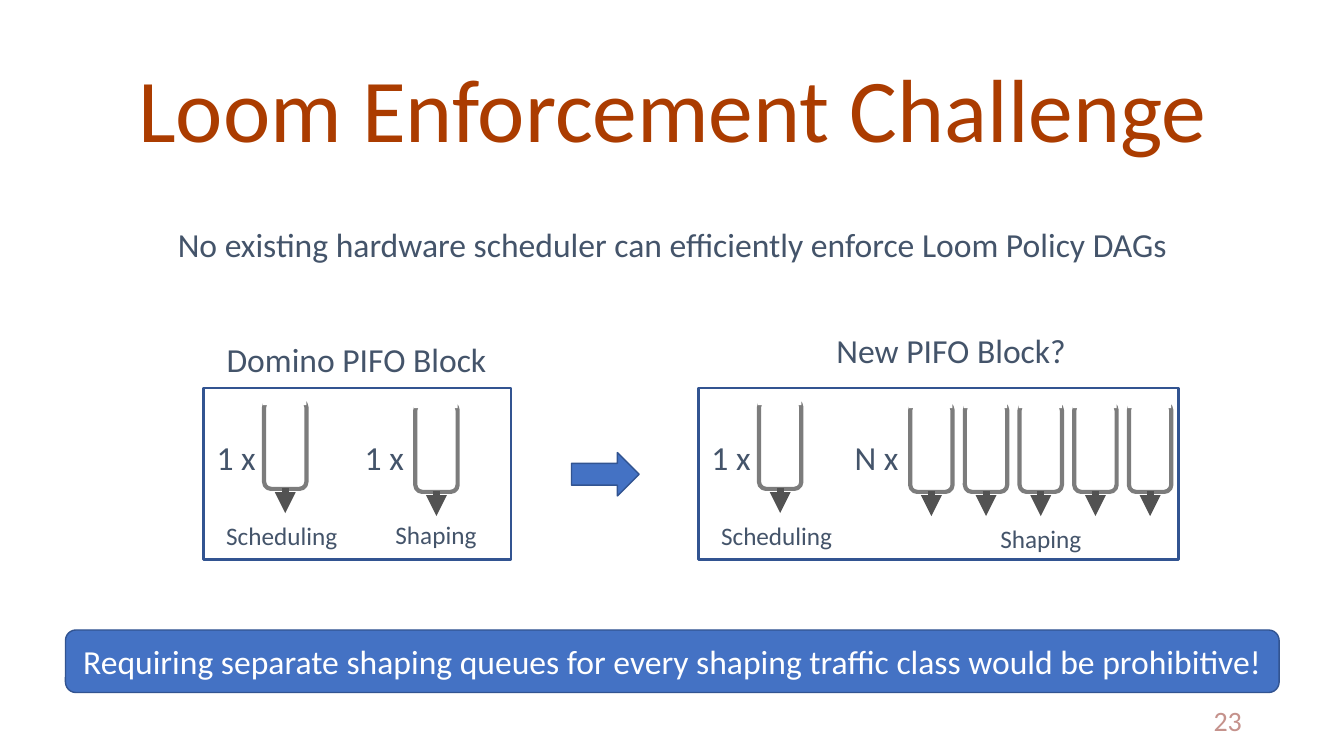
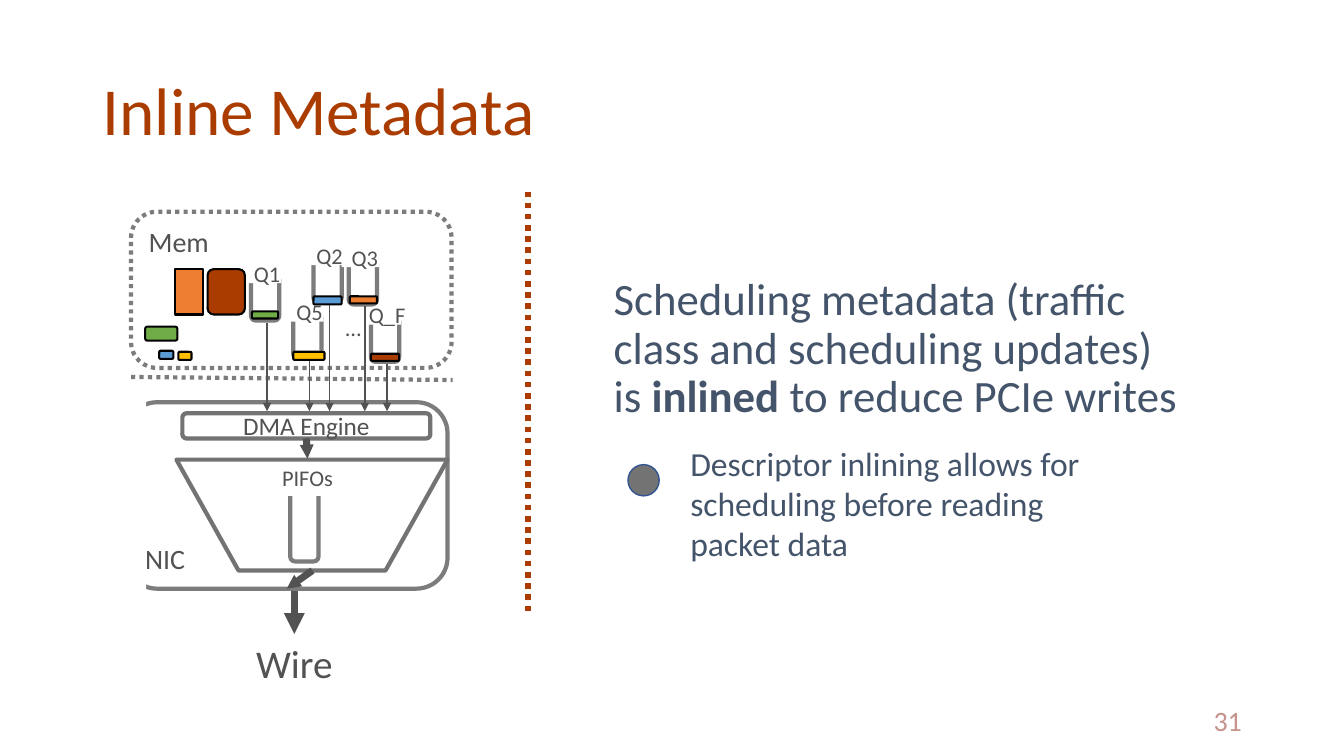
from lxml import etree
from pptx import Presentation
from pptx import util as u
from pptx.dml.color import RGBColor
from pptx.enum import dml, shapes, text
from pptx.oxml.ns import qn

HEIGHT = 7.5
WIDTH = HEIGHT * 16 / 9
FONT = "Calibri"
COLORS = {
    "rust": "AB3C00", "slate": "44546A", "ink": "525252", "gray": "7C7C7C",
    "mid": "737373", "blue": "4472C4", "navy": "325491", "white": "FFFFFF",
    "black": "000000", "page": "C5928C", "green": "70AD47", "sky": "5B9BD5",
    "gold": "FFC000", "orange": "ED7D31",
}
KIND = shapes.MSO_SHAPE
ALIGN = {"l": text.PP_ALIGN.LEFT, "c": text.PP_ALIGN.CENTER, "r": text.PP_ALIGN.RIGHT}
ANCHOR = {"t": text.MSO_ANCHOR.TOP, "m": text.MSO_ANCHOR.MIDDLE, "b": text.MSO_ANCHOR.BOTTOM}

CHALLENGE = {
    "title": "Loom Enforcement Challenge",
    "claim": "No existing hardware scheduler can efficiently enforce Loom Policy DAGs",
    "verdict": "Requiring separate shaping queues for every shaping traffic class "
               "would be prohibitive!",
    "page": "23",
}
# Horizontal places inside a block are measured from its left side.
BLOCKS = [
    {"left": 2.02, "width": 3.05, "title": ("Domino PIFO Block", 0.13, 3.31, 2.8),
     "count": ("1 x", 1.5, 0.59), "queues": 1, "shaping": (1.75, 5.1)},
    {"left": 6.93, "width": 4.76, "title": ("New PIFO Block?", 1.27, 3.22, 2.5),
     "count": ("N x", 1.45, 0.66), "queues": 5, "shaping": (2.84, 5.14)},
]
QUEUE_W, QUEUE_H, QUEUE_PITCH = 0.42, 0.88, (11.2 - 9.03) / 4

METADATA = {
    "title": "Inline Metadata",
    "claim": [("Scheduling metadata (traffic class and scheduling updates) is ", False),
              ("inlined", True), (" to reduce PCIe writes", False)],
    "detail": "Descriptor inlining allows for scheduling before reading packet data",
    "page": "31",
}
MEMORY_QUEUES = [  # label, left, top
    ("Q5", 2.91, 3.11), ("Q_F", 3.68, 3.14), ("Q1", 2.49, 2.73),
    ("Q2", 3.11, 2.55), ("Q3", 3.46, 2.57),
]
PACKETS = [  # place, colour: descriptors in the queues, then loose packets
    ((2.5, 3.09, 0.26, 0.07), "green"),
    ((3.11, 2.94, 0.28, 0.08), "sky"),
    ((2.91, 3.49, 0.31, 0.08), "gold"),
    ((3.47, 2.94, 0.27, 0.07), "orange"),
    ((3.68, 3.51, 0.28, 0.07), "rust"),
    ((1.44, 3.24, 0.32, 0.14), "green"),
    ((1.58, 3.48, 0.14, 0.08), "sky"),
    ((1.77, 3.49, 0.13, 0.08), "gold"),
    ((2.06, 2.67, 0.37, 0.45), "rust"),
]
SQUARE_PACKET = ((1.74, 2.67, 0.27, 0.45), "orange")


def rgb(color):
    return RGBColor.from_string(COLORS[color])


def inches(values):
    return [u.Inches(value) for value in values]


def write(holder, words, size, color, align="l", anchor="t", spacing=None, wrap=True):
    """Put one paragraph in a shape; words is a string or (text, bold) runs."""
    frame = holder.text_frame
    frame.word_wrap = wrap
    frame.vertical_anchor = ANCHOR[anchor]
    paragraph = frame.paragraphs[0]
    paragraph.alignment = ALIGN[align]
    if spacing:
        paragraph.line_spacing = spacing
    for words_part, bold in [(words, False)] if isinstance(words, str) else words:
        run = paragraph.add_run()
        run.text = words_part
        run.font.name, run.font.size, run.font.bold = FONT, u.Pt(size), bold
        run.font.color.rgb = rgb(color)
    return holder


def label(slide, place, words, size, color="slate", **style):
    return write(slide.shapes.add_textbox(*inches(place)), words, size, color, **style)


def stroke(line, color, width, dotted=False):
    line.color.rgb = rgb(color)
    line.width = u.Pt(width)
    if dotted:
        line.dash_style = dml.MSO_LINE.ROUND_DOT


def block(slide, kind, place, fill=None, line=None, width=1, dotted=False):
    shape = slide.shapes.add_shape(kind, *inches(place))
    shape.shadow.inherit = False
    if fill:
        shape.fill.solid()
        shape.fill.fore_color.rgb = rgb(fill)
    else:
        shape.fill.background()
    if line:
        stroke(shape.line, line, width, dotted)
    else:
        shape.line.fill.background()
    return shape


def connect(slide, start, end, color="ink", width=5, dotted=False, head="med"):
    """Draw a straight line; head is the arrowhead's size, or None."""
    link = slide.shapes.add_connector(shapes.MSO_CONNECTOR.STRAIGHT, *inches(start + end))
    stroke(link.line, color, width, dotted)
    properties = link._element.spPr
    if head:
        etree.SubElement(properties.find(qn("a:ln")), qn("a:tailEnd"),
                         type="triangle", w=head, len=head)
    etree.SubElement(properties, qn("a:effectLst"))
    return link


def open_queue(slide, place, cover):
    """Draw a rounded box whose top side is hidden by a white cover."""
    block(slide, KIND.ROUNDED_RECTANGLE, place, "white", "gray", 3)
    block(slide, KIND.RECTANGLE, cover, "white")


def new_slide(deck, content, size, align):
    slide = deck.slides.add_slide(deck.slide_layouts[6])
    label(slide, (0.92, 0.4, 11.5, 1.45), content["title"], size, "rust",
          align=align, anchor="m", spacing=0.9)
    label(slide, (9.42, 6.95, 3, 0.4), content["page"], 20, "page", align="r", anchor="m")
    return slide


def pifo_queue(slide, left, top):
    open_queue(slide, (left, top, QUEUE_W, QUEUE_H),
               (left - 0.01, top - 0.07, QUEUE_W + 0.01, 0.12))
    center, bottom = left + QUEUE_W / 2, top + QUEUE_H
    connect(slide, (center, bottom - 0.01), (center, bottom + 0.24))


def pifo_block(slide, spec):
    left = spec["left"]
    block(slide, KIND.RECTANGLE, (left, 3.85, spec["width"], 1.7), None, "navy", 2)
    title, shift, top, width = spec["title"]
    label(slide, (left + shift, top, width, 0.5), title, 24, wrap=False)
    for count, shift, width in [("1 x", 0.03, 0.59), spec["count"]]:
        label(slide, (left + shift, 4.29, width, 0.5), count, 24, wrap=False)
    label(slide, (left + 0.03, 5.11, 1.49, 0.4), "Scheduling", 18, align="c")
    shift, top = spec["shaping"]
    label(slide, (left + shift, top, 1.11, 0.4), "Shaping", 18, align="c")
    pifo_queue(slide, left + 0.6, 3.97)
    for index in range(spec["queues"]):
        pifo_queue(slide, left + 2.1 + index * QUEUE_PITCH, 4)


def challenge_slide(deck):
    slide = new_slide(deck, CHALLENGE, 64, "c")
    label(slide, (0.92, 2.22, 11.5, 0.85), CHALLENGE["claim"], 24, align="c", spacing=0.9)
    for spec in BLOCKS:
        pifo_block(slide, spec)
    block(slide, KIND.RIGHT_ARROW, (5.67, 4.49, 0.67, 0.43), "blue", "navy")
    verdict = block(slide, KIND.ROUNDED_RECTANGLE, (0.65, 6.25, 12.04, 0.62), "blue", "navy")
    write(verdict, CHALLENGE["verdict"], 24, "white", align="c", anchor="m")


def memory_queue(slide, name, left, top):
    width, height = 0.28, 0.45
    open_queue(slide, (left, top, width, height), (left - 0.07, top - 0.04, 0.37, 0.12))
    center, bottom = left + width / 2 + 0.02, top + height
    connect(slide, (center, bottom + 0.02), (center, 4.08), width=1)
    label(slide, (left - 0.13, top - 0.2, 0.58, 0.37), name, 16, "ink", align="c")


def network_card(slide):
    nic = block(slide, KIND.ROUNDED_RECTANGLE, (1.25, 3.99, 3.19, 1.85), "white", "gray", 3)
    write(nic, "NIC", 20, "ink", anchor="b")
    block(slide, KIND.RECTANGLE, (1.08, 3.82, 0.37, 3.46), "white")
    engine = block(slide, KIND.ROUNDED_RECTANGLE, (1.81, 4.1, 2.46, 0.25), None, "mid", 3)
    write(engine, "DMA Engine", 18, "ink", align="c", anchor="m")
    funnel = block(slide, KIND.TRAPEZOID, (1.75, 4.56, 2.69, 1.1), None, "mid", 3)
    funnel.rotation = 180
    funnel.adjustments[0] = 0.56
    open_queue(slide, (2.88, 4.86, 0.28, 0.71), (2.7, 4.82, 0.63, 0.1))
    label(slide, (2.14, 4.56, 1.82, 0.37), "PIFOs", 16, "ink", align="c")
    wire = label(slide, (1.72, 6.29, 2.4, 0.52), "Wire", 28, "ink", align="c")

    connect(slide, (3.04, 4.35), (3.05, 4.55), head="sm").begin_connect(engine, 2)
    connect(slide, (3.1, 5.66), (2.84, 5.84), head="sm").end_connect(nic, 2)
    connect(slide, (2.92, 5.86), (2.92, 6.29)).end_connect(wire, 0)


def metadata_slide(deck):
    slide = new_slide(deck, METADATA, 48, "l")
    network_card(slide)
    connect(slide, (5.24, 1.9), (5.24, 6.1), "rust", 4, dotted=True, head=None)
    connect(slide, (1.3, 3.74), (4.49, 3.77), "gray", 3, dotted=True, head=None)

    memory = block(slide, KIND.ROUNDED_RECTANGLE, (1.3, 2.1, 3.18, 1.55), None, "gray", 3, True)
    write(memory, "Mem", 20, "ink")
    for queue in MEMORY_QUEUES:
        memory_queue(slide, *queue)
    label(slide, (3.33, 3.07, 0.26, 0.37), "…", 16, "ink", align="c")
    for place, color in PACKETS + [SQUARE_PACKET]:
        packet = block(slide, KIND.ROUNDED_RECTANGLE, place, color, "black", 1.5)
    packet.adjustments[0] = 0

    label(slide, (5.99, 2.7, 5.9, 1.65), METADATA["claim"], 32, spacing=0.9)
    block(slide, KIND.OVAL, (6.23, 4.61, 0.31, 0.31), "mid", "navy")
    label(slide, (6.75, 4.34, 4.57, 1.31), METADATA["detail"], 24)


def main():
    deck = Presentation()
    deck.slide_width, deck.slide_height = inches((WIDTH, HEIGHT))
    challenge_slide(deck)
    metadata_slide(deck)
    deck.save("out.pptx")


if __name__ == "__main__":
    main()
